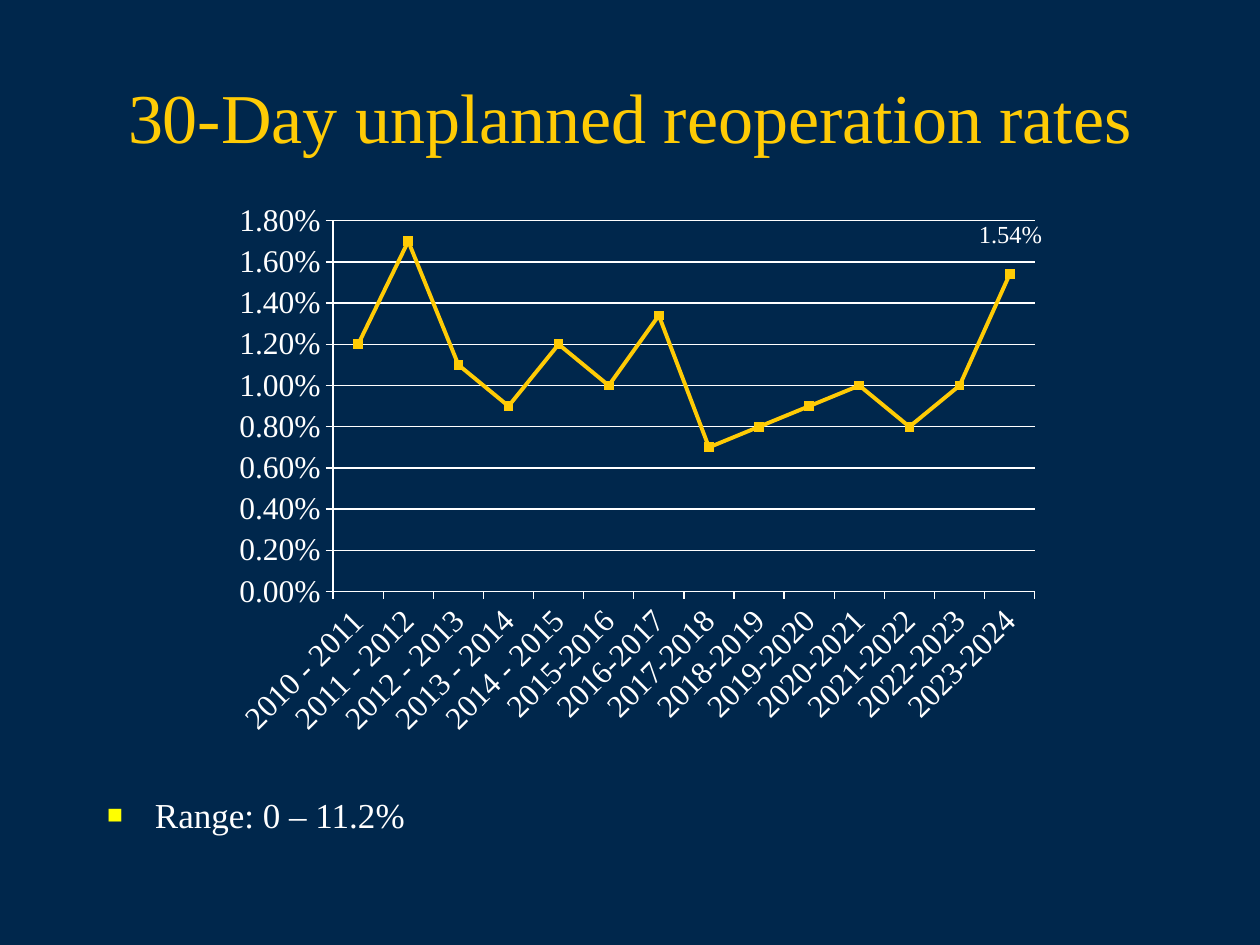
from dataclasses import dataclass

from lxml import etree
from pptx import Presentation
from pptx.chart.data import CategoryChartData
from pptx.dml.color import RGBColor
from pptx.enum.chart import XL_CHART_TYPE, XL_MARKER_STYLE, XL_TICK_MARK
from pptx.enum.text import MSO_ANCHOR, MSO_AUTO_SIZE, PP_ALIGN
from pptx.oxml.ns import qn
from pptx.util import Inches, Pt

LINE = XL_CHART_TYPE.LINE_MARKERS
SQUARE = XL_MARKER_STYLE.SQUARE
OUT, NONE = XL_TICK_MARK.OUTSIDE, XL_TICK_MARK.NONE
TOP, MIDDLE = MSO_ANCHOR.TOP, MSO_ANCHOR.MIDDLE
FIXED = MSO_AUTO_SIZE.NONE
LEFT, CENTER = PP_ALIGN.LEFT, PP_ALIGN.CENTER

WIDE, HIGH = Inches(10), Inches(7.5)


@dataclass(frozen=True)
class Theme:
    face: str = "Times New Roman"
    back: RGBColor = RGBColor(0x00, 0x27, 0x4C)
    gold: RGBColor = RGBColor(0xFF, 0xCB, 0x05)
    white: RGBColor = RGBColor(0xFF, 0xFF, 0xFF)
    bullet: str = "FFFF00"
    title: Pt = Pt(40)
    body: Pt = Pt(20)
    axis: Pt = Pt(18)
    note: Pt = Pt(14)
    trend: Pt = Pt(2.25)
    rule: Pt = Pt(0.75)


THEME = Theme()

# Boxes are left, top, width and height as shares of the slide.
TITLE_BOX = (0.075, 0.033, 0.85, 0.178)
CHART_BOX = (0.167, 0.204, 0.667, 0.592)
NOTE_BOX = (0.767, 0.225, 0.075, 0.045)
BODY_BOX = (0.075, 0.833, 0.85, 0.123)
PLOT = {"x": 0.146, "y": 0.05, "w": 0.835, "h": 0.663}

SPACED = [f"{year} - {year + 1}" for year in range(2010, 2015)]
TIGHT = [f"{year}-{year + 1}" for year in range(2015, 2024)]
RATES = (0.012, 0.017, 0.011, 0.009, 0.012, 0.01, 0.0134,
         0.007, 0.008, 0.009, 0.01, 0.008, 0.01, 0.0154)


def apply(target, **values):
    for name, value in values.items():
        setattr(target, name, value)


def scale(box):
    """Turn shares of the slide into lengths."""
    return [round(share * side) for share, side in zip(box, (WIDE, HIGH) * 2)]


def place(shape, box):
    apply(shape, **dict(zip(("left", "top", "width", "height"), scale(box))))


def style(font, size, color):
    apply(font, name=THEME.face, size=size, bold=False)
    font.color.rgb = color


def write(shape, text, size, color, align=LEFT, anchor=TOP, wrap=True):
    frame = shape.text_frame
    frame.text = text
    apply(frame, word_wrap=wrap, auto_size=FIXED, vertical_anchor=anchor)
    para = frame.paragraphs[0]
    para.alignment = align
    style(para.runs[0].font, size, color)
    return para


def add_title(slide, box):
    place(slide.shapes.title, box)
    write(slide.shapes.title, "30-Day unplanned reoperation rates",
          THEME.title, THEME.gold, CENTER, MIDDLE)


def add_body(slide, box):
    body = slide.placeholders[1]
    place(body, box)
    para = write(body, "Range: 0 – 11.2%", THEME.body, THEME.white)
    para.space_before = Pt(4)
    props = para._p.get_or_add_pPr()
    indent = Inches(0.38)
    props.set("marL", str(indent))
    props.set("indent", str(-indent))
    color = etree.SubElement(props, qn("a:buClr"))
    etree.SubElement(color, qn("a:srgbClr"), val=THEME.bullet)
    etree.SubElement(props, qn("a:buSzPct"), val="75000")
    etree.SubElement(props, qn("a:buFont"), typeface=THEME.face)
    etree.SubElement(props, qn("a:buChar"), char="■")


def add_note(slide, box):
    note = slide.shapes.add_textbox(*scale(box))
    write(note, "1.54%", THEME.note, THEME.white, wrap=False)


def draw_line(line, color, width):
    line.color.rgb = color
    line.width = width


def set_plot(chart):
    """Fix the inner plot area at its shares of the chart."""
    area = chart._chartSpace.chart.plotArea
    old = area.find(qn("c:layout"))
    if old is not None:
        area.remove(old)
    layout = etree.Element(qn("c:layout"))
    area.insert(0, layout)
    manual = etree.SubElement(layout, qn("c:manualLayout"))
    parts = {"layoutTarget": "inner", "xMode": "edge", "yMode": "edge", **PLOT}
    for name, value in parts.items():
        etree.SubElement(manual, qn(f"c:{name}"), val=str(value))


def add_trend(slide, box):
    data = CategoryChartData(number_format="0.00%")
    data.categories = SPACED + TIGHT
    data.add_series("Series 1", RATES)
    chart = slide.shapes.add_chart(LINE, *scale(box), data).chart
    apply(chart, has_legend=False, has_title=False)
    style(chart.font, THEME.axis, THEME.white)
    set_plot(chart)

    years, rates = chart.category_axis, chart.value_axis
    for axis in (years, rates):
        apply(axis, major_tick_mark=OUT, minor_tick_mark=NONE)
        draw_line(axis.format.line, THEME.white, THEME.rule)
        style(axis.tick_labels.font, THEME.axis, THEME.white)
    years._element.find(f".//{qn('a:bodyPr')}").set("rot", "-2700000")
    apply(rates, minimum_scale=0, maximum_scale=0.018, major_unit=0.002,
          has_major_gridlines=True)
    draw_line(rates.major_gridlines.format.line, THEME.white, THEME.rule)
    apply(rates.tick_labels, number_format="0.00%",
          number_format_is_linked=False)

    plot = chart.plots[0]
    plot.vary_by_categories = False
    trend = plot.series[0]
    trend.smooth = False
    draw_line(trend.format.line, THEME.gold, THEME.trend)
    apply(trend.marker, style=SQUARE, size=5)
    paint = trend.marker.format
    paint.fill.solid()
    paint.fill.fore_color.rgb = THEME.gold
    draw_line(paint.line, THEME.gold, THEME.rule)


def main():
    deck = Presentation()
    apply(deck, slide_width=WIDE, slide_height=HIGH)
    slide = deck.slides.add_slide(deck.slide_layouts[1])
    fill = slide.background.fill
    fill.solid()
    fill.fore_color.rgb = THEME.back
    add_title(slide, TITLE_BOX)
    add_body(slide, BODY_BOX)
    add_trend(slide, CHART_BOX)
    add_note(slide, NOTE_BOX)
    deck.save("out.pptx")


if __name__ == "__main__":
    main()
